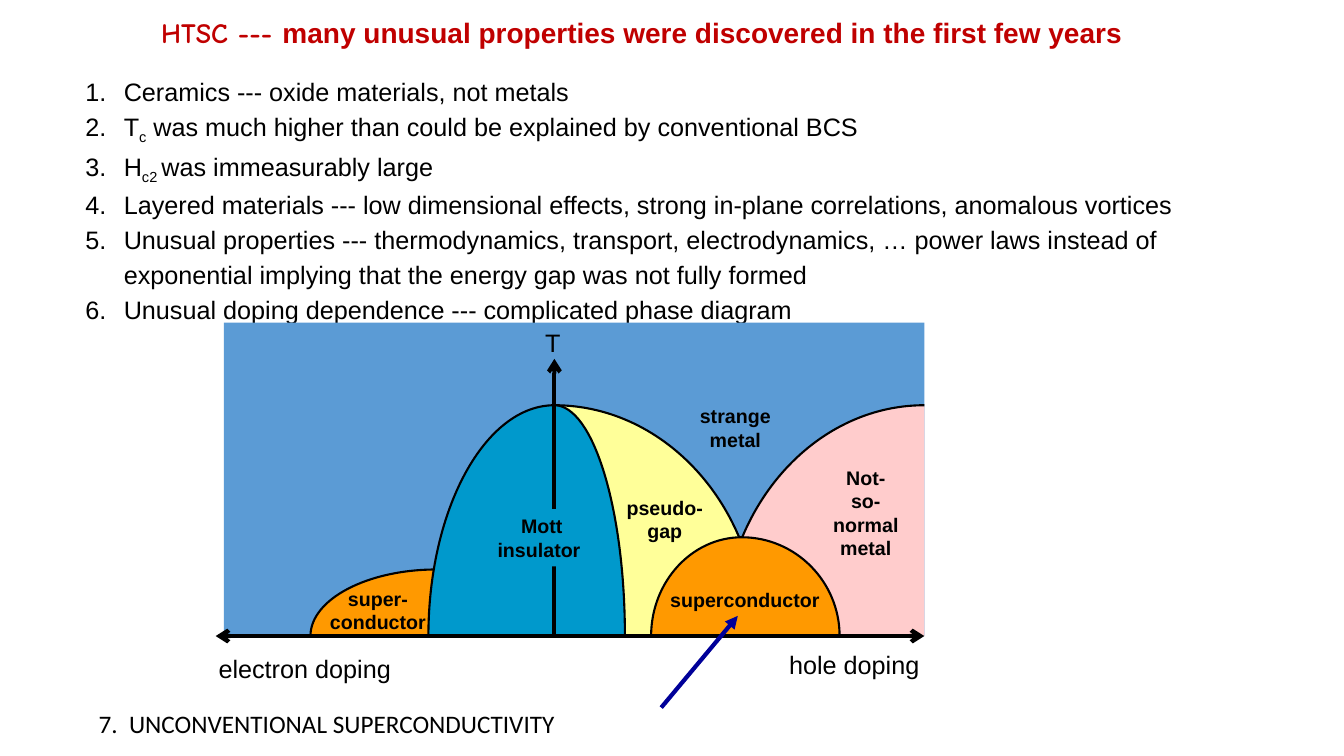
import pptx
import pptx.dml.color
import pptx.enum.shapes
import pptx.enum.text
import pptx.oxml
import pptx.oxml.ns
import pptx.util

PX = 9144
ALIGN = pptx.enum.text.PP_ALIGN
LEFT, CENTER = ALIGN.LEFT, ALIGN.CENTER
RECTANGLE = pptx.enum.shapes.MSO_SHAPE.RECTANGLE
NAMESPACE = pptx.oxml.ns.nsdecls("a")
BLACK, TEAL, ORANGE = "000000", "0099CC", "FF9900"


def color(value):
    return pptx.dml.color.RGBColor.from_string(value)


def write(shape, paragraphs, wrap, size, font="Arial", bold=None, ink=BLACK, align=LEFT, spacing=None):
    frame = shape.text_frame
    frame.word_wrap = wrap
    frame.auto_size = pptx.enum.text.MSO_AUTO_SIZE.SHAPE_TO_FIT_TEXT
    for index, runs in enumerate(paragraphs):
        paragraph = frame.paragraphs[0] if index == 0 else frame.add_paragraph()
        for name, value in {"alignment": align, "line_spacing": spacing}.items():
            setattr(paragraph, name, value)
        for text in runs:
            run = paragraph.add_run()
            run.text = text
            for name, value in {"name": font, "size": pptx.util.Pt(size), "bold": bold}.items():
                setattr(run.font, name, value)
            run.font.color.rgb = color(ink)
    return frame


presentation = pptx.Presentation()
presentation.slide_width = pptx.util.Pt(960)
presentation.slide_height = pptx.util.Pt(540)
slide = presentation.slides.add_slide(presentation.slide_layouts[6])

properties = [
    ["Ceramics --- oxide materials, not metals"],
    ["T", "c", " was much higher than could be explained by conventional BCS"],
    ["H", "c2 ", "was immeasurably large"],
    ["Layered materials --- low dimensional effects, strong in-plane correlations, anomalous vortices"],
    ["Unusual properties --- thermodynamics, transport, electrodynamics, … power laws instead of "
     "exponential implying that the energy gap was not fully formed"],
    ["Unusual doping dependence --- complicated phase diagram"],
]
property_box = slide.shapes.add_textbox(75 * PX, 66 * PX, 1154 * PX, 254 * PX)
property_frame = write(property_box, properties, True, 18, spacing=1.15)
for paragraph in property_frame.paragraphs:
    paragraph_format = paragraph._p.get_or_add_pPr()
    for name, value in {"marL": 38 * PX, "indent": -38 * PX}.items():
        paragraph_format.set(name, str(value))
    paragraph_format.append(pptx.oxml.parse_xml(f'<a:buAutoNum {NAMESPACE} type="arabicPeriod"/>'))
    for subscript in paragraph.runs[1:2]:
        subscript.font._element.set("baseline", "-25000")

title_box = slide.shapes.add_textbox(150 * PX, 10 * PX, 1005 * PX, 44 * PX)
title = ["HTSC --- ", "many unusual properties were discovered in the first few years"]
title_frame = write(title_box, [title], False, 20, bold=True, ink="C00000")
title_frame.paragraphs[0].runs[0].font.name = "Comic Neue"

diagram = slide.shapes.add_group_shape().shapes
background = diagram.add_shape(RECTANGLE, 222 * PX, 320 * PX, 695 * PX, 311 * PX)
background.shadow.inherit = False
background.fill.solid()
background.fill.fore_color.rgb = color("5B9BD5")
background.line.fill.background()

BASE = 631
ROUNDNESS = 0.55
quarter_domes = [
    (550, 203, 229, "FFFF99"),
    (433, -125, 66, ORANGE),
    (550, -125, 229, TEAL),
    (917, -200, 229, "FFCCCC"),
    (736, 97, 98, ORANGE),
    (550, 70, 229, TEAL),
    (736, -90, 98, ORANGE),
]
for center, reach, height, fill in quarter_domes:
    builder = diagram.build_freeform(center, BASE - height, PX)
    builder.add_line_segments([(center + reach, BASE), (center, BASE)], close=True)
    dome = builder.convert_to_shape()
    dome.shadow.inherit = False
    dome.fill.solid()
    dome.fill.fore_color.rgb = color(fill)
    dome.line.color.rgb = color(BLACK)
    dome.line.width = pptx.util.Pt(1.5)

    middle = max(-reach, 0)
    bend = [(middle + ROUNDNESS * reach, 0), (middle + reach, height * (1 - ROUNDNESS)),
            (middle + reach, height)]
    start, *controls, corner = [
        f'<a:pt x="{round(x * PX)}" y="{round(y * PX)}"/>' for x, y in [(middle, 0), *bend, (middle, height)]]
    curve = f'<a:moveTo>{start}</a:moveTo><a:cubicBezTo>{"".join(controls)}</a:cubicBezTo>'
    area = f'{curve}<a:lnTo>{corner}</a:lnTo><a:close/>'
    outlines = dome._element.spPr.find(".//" + pptx.oxml.ns.qn("a:pathLst"))
    outlines.remove(outlines[0])
    for option, drawing in (('fill="none"', curve), ('stroke="0"', area)):
        outlines.append(pptx.oxml.parse_xml(
            f'<a:path {NAMESPACE} w="{abs(reach) * PX}" h="{height * PX}" {option}>{drawing}</a:path>'))

arrows = [
    (diagram, 214, BASE, 917, BASE, BLACK, {"headEnd": "arrow", "tailEnd": "arrow"}),
    (diagram, 550, BASE, 550, 356, BLACK, {"tailEnd": "arrow"}),
    (slide.shapes, 656, 702, 732, 611, "000099", {"tailEnd": "triangle"}),
]
for parent, left, top, right, bottom, ink, ends in arrows:
    arrow = parent.add_connector(pptx.enum.shapes.MSO_CONNECTOR.STRAIGHT,
                                 left * PX, top * PX, right * PX, bottom * PX)
    arrow.line.color.rgb = color(ink)
    arrow.line.width = pptx.util.Pt(3)
    for tag, kind in ends.items():
        arrow.line._get_or_add_ln().append(
            pptx.oxml.parse_xml(f'<a:{tag} {NAMESPACE} type="{kind}"/>'))
    arrow._element.spPr.append(pptx.oxml.parse_xml(f'<a:effectLst {NAMESPACE}/>'))

mott = diagram.add_shape(RECTANGLE, 479 * PX, 505 * PX, 117 * PX, 57 * PX)
mott.shadow.inherit = False
mott.fill.solid()
mott.fill.fore_color.rgb = color(TEAL)
mott.line.fill.background()
write(mott, [["Mott insulator "]], True, 14, bold=True, align=CENTER)

phase_labels = [
    (317, 577, 116, 57, ["super-", "conductor"], False, CENTER),
    (597, 487, 125, 57, ["pseudo-", "gap"], True, CENTER),
    (675, 396, 109, 57, ["strange metal"], True, CENTER),
    (816, 457, 86, 104, ["Not-so-normal metal"], True, CENTER),
    (655, 578, 169, 34, ["superconductor"], False, LEFT),
]
for left, top, width, height, lines, wrap, align in phase_labels:
    label = diagram.add_textbox(left * PX, top * PX, width * PX, height * PX)
    write(label, [[line] for line in lines], wrap, 14, bold=True, align=align)

captions = [
    (diagram, 531, 320, 36, 40, "T", "Arial", None),
    (diagram, 773, 639, 151, 40, "hole doping", "Arial", None),
    (diagram, 207, 643, 193, 40, "electron doping", "Arial", None),
    (slide.shapes, 88, 693, 573, 45, "7.  UNCONVENTIONAL SUPERCONDUCTIVITY", "Calibri", 1.15),
]
for parent, left, top, width, height, text, font, spacing in captions:
    caption = parent.add_textbox(left * PX, top * PX, width * PX, height * PX)
    write(caption, [[text]], False, 18, font=font, spacing=spacing)

presentation.save("out.pptx")
